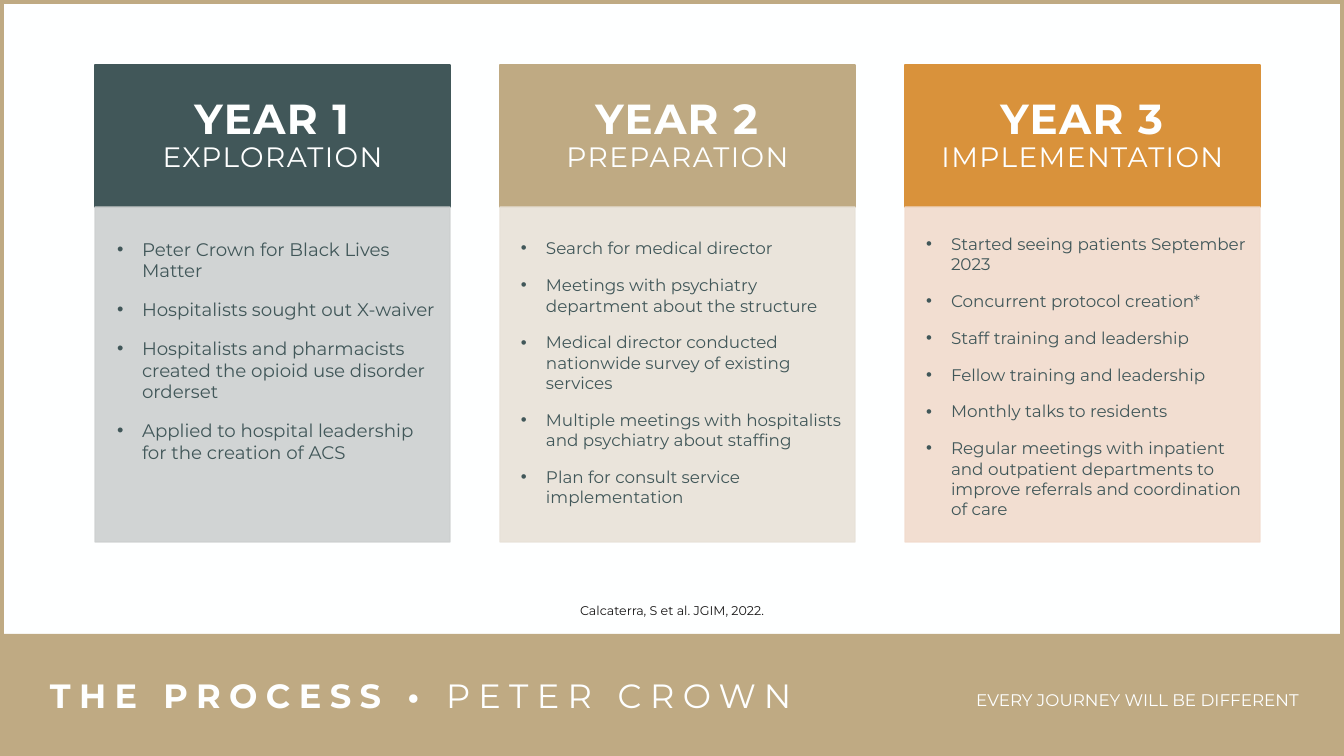
from lxml.etree import SubElement
from pptx import Presentation
from pptx.dml.color import RGBColor
from pptx.enum.shapes import MSO_SHAPE as Shape
from pptx.enum.text import MSO_ANCHOR as Anchor, PP_ALIGN as Align
from pptx.oxml.ns import qn
from pptx.util import Emu, Pt

COLORS = {
    "white": "FEFFFF", "tan": "BFAA83", "slate": "415759", "orange": "D9923B",
    "pale_slate": "CDD0D0", "pale_tan": "E8E2D8", "pale_orange": "F1DBCD",
    "ink": "171616",
}
FONT = "Montserrat"
TITLE = ("THE PROCESS • ", "PETER CROWN")
TAGLINE = "EVERY JOURNEY WILL BE DIFFERENT"
CITATION = "Calcaterra, S et al. JGIM, 2022."
YEARS = [
    {"year": "YEAR 1", "phase": "EXPLORATION", "dark": "slate", "pale": "pale_slate",
     "size": 13, "inset": 8, "top": 229, "height": 243,
     "steps": ["Peter Crown for Black Lives Matter",
               "Hospitalists sought out X-waiver",
               "Hospitalists and pharmacists created the opioid use disorder orderset",
               "Applied to hospital leadership for the creation of ACS"]},
    {"year": "YEAR 2", "phase": "PREPARATION", "dark": "tan", "pale": "pale_tan",
     "size": 12, "inset": 7, "top": 230, "height": 285,
     "steps": ["Search for medical director",
               "Meetings with psychiatry department about the structure",
               "Medical director conducted nationwide survey of existing services",
               "Multiple meetings with hospitalists and psychiatry about staffing",
               "Plan for consult service implementation"]},
    {"year": "YEAR 3", "phase": "IMPLEMENTATION", "dark": "orange", "pale": "pale_orange",
     "size": 12, "inset": 7, "top": 225, "height": 302,
     "steps": ["Started seeing patients September 2023",
               "Concurrent protocol creation*",
               "Staff training and leadership",
               "Fellow training and leadership",
               "Monthly talks to residents",
               "Regular meetings with inpatient and outpatient departments "
               "to improve referrals and coordination of care"]},
]

WIDTH, HEIGHT = 1344, 756
FOOTER_TOP = 634
COLUMN_LEFT, COLUMN_PITCH, COLUMN_WIDTH = 95, 405, 355
HEADER_TOP, HEADER_HEIGHT, BODY_HEIGHT = 65, 142, 335
BODY_TOP = HEADER_TOP + HEADER_HEIGHT


def px(length):
    return Emu(round(length * 914400 / 100.8))


def rgb(name):
    return RGBColor.from_string(COLORS[name])


def add_panel(page, left, top, width, height, color, line=None, line_width=1, alpha=None):
    panel = page.shapes.add_shape(Shape.RECTANGLE, px(left), px(top), px(width), px(height))
    panel.shadow.inherit = False
    panel.fill.solid()
    panel.fill.fore_color.rgb = rgb(color)
    if line:
        panel.line.color.rgb = rgb(line)
        panel.line.width = Pt(line_width)
    else:
        panel.line.fill.background()
    if alpha:
        for tint in panel._element.spPr.iter(qn("a:srgbClr")):
            SubElement(tint, qn("a:alpha"), val=str(alpha * 1000))


def add_text(page, left, top, width, height, inset=0, anchor=Anchor.MIDDLE):
    frame = page.shapes.add_textbox(px(left), px(top), px(width), px(height)).text_frame
    frame.word_wrap = True
    frame.vertical_anchor = anchor
    frame.margin_left = frame.margin_right = px(inset)
    frame.margin_top = frame.margin_bottom = px(inset)
    return frame


def style(span, size, color, bold=False, spacing=0):
    span.font.name = FONT
    span.font.size = Pt(size)
    span.font.bold = bold
    span.font.color.rgb = rgb(color)
    if spacing:
        span._r.get_or_add_rPr().set("spc", str(spacing * 100))


def add_note(frame, text, size, color, align, line_spacing, before):
    frame.text = text
    para = frame.paragraphs[0]
    para.alignment = align
    para.line_spacing = line_spacing
    para.space_before = Pt(before)
    style(para.runs[0], size, color)


def add_header(page, left, year):
    add_panel(page, left, HEADER_TOP, COLUMN_WIDTH, HEADER_HEIGHT, year["dark"], year["dark"])
    frame = add_text(page, left + 10, HEADER_TOP + 18, COLUMN_WIDTH - 20, HEADER_HEIGHT - 36, 13)
    para = frame.paragraphs[0]
    para.text = year["year"] + "\v" + year["phase"]
    para.alignment = Align.CENTER
    para.line_spacing = 0.9
    style(para.runs[0], 30, "white", True, 1)
    style(para.runs[1], 20, "white", False, 1)


def add_steps(page, left, year):
    add_panel(page, left, BODY_TOP, COLUMN_WIDTH, BODY_HEIGHT, year["pale"], year["pale"], alpha=90)
    frame = add_text(page, left, year["top"], COLUMN_WIDTH - 2, year["height"], year["inset"])
    frame.text = "\n".join(year["steps"])
    for para in frame.paragraphs:
        para.space_before = Pt(12)
        style(para.runs[0], year["size"], "slate")
        properties = para._p.get_or_add_pPr()
        properties.set("marL", str(px(39)))
        properties.set("indent", str(px(-25)))
        SubElement(properties, qn("a:buFont"), typeface="Arial")
        SubElement(properties, qn("a:buChar"), char="•")


def main():
    deck = Presentation()
    deck.slide_width, deck.slide_height = px(WIDTH), px(HEIGHT)
    page = deck.slides.add_slide(deck.slide_layouts[6])
    page.background.fill.solid()
    page.background.fill.fore_color.rgb = rgb("white")
    add_panel(page, 0, 0, WIDTH, HEIGHT, "white", "tan", 6)
    add_panel(page, 0, FOOTER_TOP, WIDTH, HEIGHT - FOOTER_TOP, "tan")

    heading = add_text(page, 45, 659, 896, 72, 5).paragraphs[0]
    for index, words in enumerate(TITLE):
        span = heading.add_run()
        span.text = words
        style(span, 24, "white", index == 0, 6)
    add_note(add_text(page, 672, 659, 627, 72), TAGLINE, 12, "white", Align.RIGHT, 1.5, 30)

    for index, year in enumerate(YEARS):
        left = COLUMN_LEFT + index * COLUMN_PITCH
        add_header(page, left, year)
        add_steps(page, left, year)

    citation = add_text(page, 245, 532, 854, 86, anchor=Anchor.BOTTOM)
    add_note(citation, CITATION, 9, "ink", Align.CENTER, 1.25, 10)
    deck.save("out.pptx")


if __name__ == "__main__":
    main()
